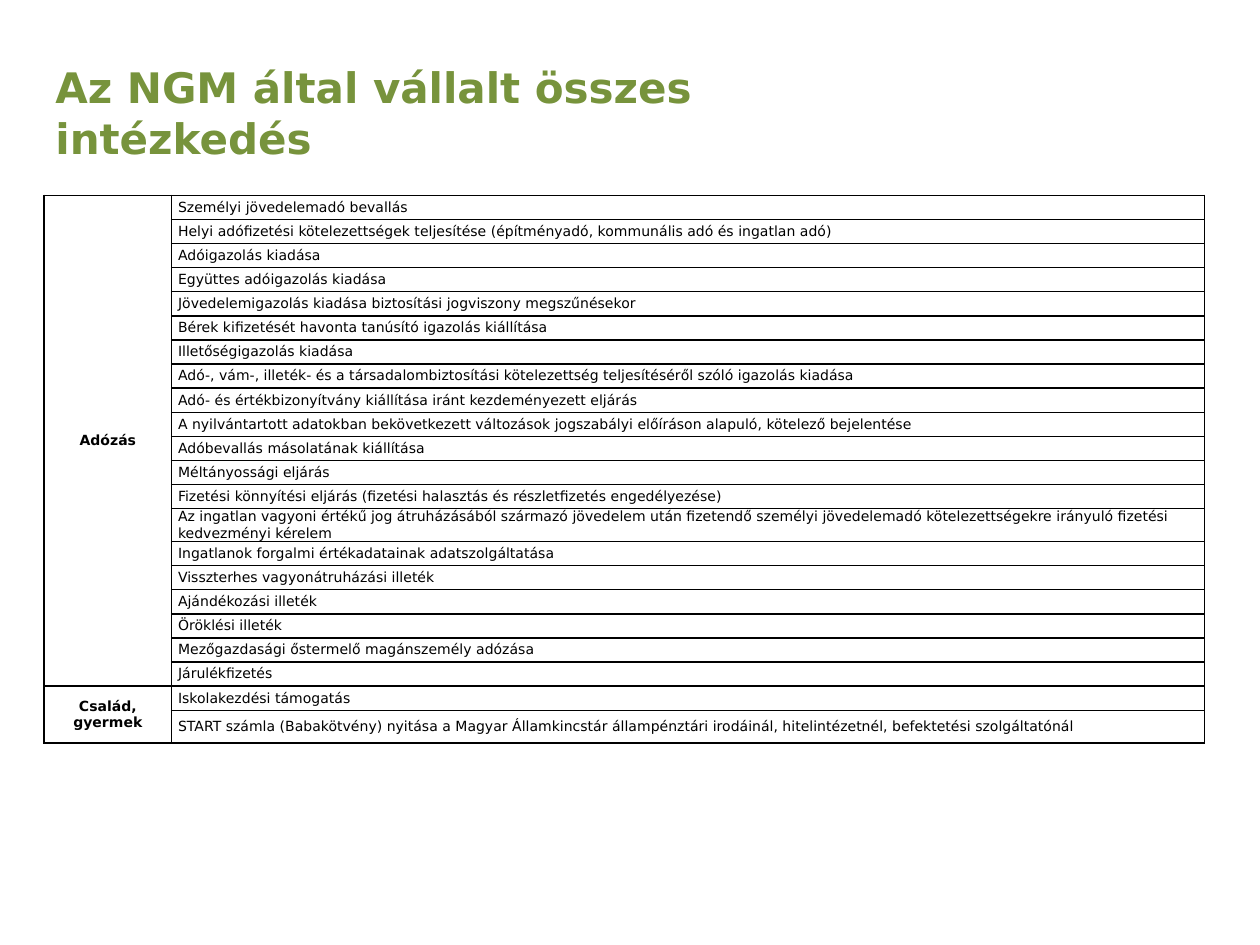
import dataclasses

import lxml.etree
import pptx
import pptx.dml.color
import pptx.enum.text
import pptx.oxml.ns
import pptx.util

WIDE, HIGH = 10, 7.5
FACE = "DejaVu Sans"
GREEN, BLACK = "77933C", "000000"
COLS = (0.11, 0.89)  # shares of the table width
LEFT, TOP, SPAN, DEPTH = 0.35, 1.55, 9.21, 4.35
TALL = 0.26  # height of the taller rows


@dataclasses.dataclass
class Group:
    name: str
    items: list[str]
    tall: int  # index of the taller row


GROUPS = [
    Group("Adózás", [
        "Személyi jövedelemadó bevallás",
        "Helyi adófizetési kötelezettségek teljesítése (építményadó, kommunális adó és ingatlan adó)",
        "Adóigazolás kiadása",
        "Együttes adóigazolás kiadása",
        "Jövedelemigazolás kiadása biztosítási jogviszony megszűnésekor",
        "Bérek kifizetését havonta tanúsító igazolás kiállítása",
        "Illetőségigazolás kiadása",
        "Adó-, vám-, illeték- és a társadalombiztosítási kötelezettség teljesítéséről szóló igazolás kiadása",
        "Adó- és értékbizonyítvány kiállítása iránt kezdeményezett eljárás",
        "A nyilvántartott adatokban bekövetkezett változások jogszabályi előíráson alapuló, kötelező bejelentése",
        "Adóbevallás másolatának kiállítása",
        "Méltányossági eljárás",
        "Fizetési könnyítési eljárás (fizetési halasztás és részletfizetés engedélyezése)",
        "Az ingatlan vagyoni értékű jog átruházásából származó jövedelem után fizetendő személyi "
        "jövedelemadó kötelezettségekre irányuló fizetési kedvezményi kérelem",
        "Ingatlanok forgalmi értékadatainak adatszolgáltatása",
        "Visszterhes vagyonátruházási illeték",
        "Ajándékozási illeték",
        "Öröklési illeték",
        "Mezőgazdasági őstermelő magánszemély adózása",
        "Járulékfizetés",
    ], 13),
    Group("Család, gyermek", [
        "Iskolakezdési támogatás",
        "START számla (Babakötvény) nyitása a Magyar Államkincstár állampénztári irodáinál, "
        "hitelintézetnél, befektetési szolgáltatónál",
    ], 1),
]


def inch(size: float) -> int:
    return pptx.util.Inches(size)


def tint(color: str) -> pptx.dml.color.RGBColor:
    return pptx.dml.color.RGBColor.from_string(color)


def write(para, text: str, size: float, color: str, bold: bool, center: bool = False) -> None:
    align = pptx.enum.text.PP_ALIGN
    para.alignment = align.CENTER if center else align.LEFT
    run = para.add_run()
    run.text = text
    run.font.name = FACE
    run.font.size = pptx.util.Pt(size)
    run.font.bold = bold
    run.font.color.rgb = tint(color)


def frame(cell) -> None:
    """Clear the fill, tighten the margins and draw all four borders."""
    cell.margin_left = cell.margin_right = inch(0.05)
    cell.margin_top = cell.margin_bottom = 0
    cell.vertical_anchor = pptx.enum.text.MSO_ANCHOR.MIDDLE
    props = cell._tc.get_or_add_tcPr()
    name = pptx.oxml.ns.qn
    for side in ("a:lnL", "a:lnR", "a:lnT", "a:lnB"):
        line = lxml.etree.SubElement(props, name(side), w=str(pptx.util.Pt(1)))
        fill = lxml.etree.SubElement(line, name("a:solidFill"))
        lxml.etree.SubElement(fill, name("a:srgbClr"), val=BLACK)
    cell.fill.background()


def head(slide, text: str) -> None:
    title = slide.shapes.title
    title.left, title.top = inch(-0.04), inch(0.44)
    title.width, title.height = inch(6.22), inch(0.79)
    box = title.text_frame
    box.word_wrap = True
    box.auto_size = pptx.enum.text.MSO_AUTO_SIZE.NONE
    box.vertical_anchor = pptx.enum.text.MSO_ANCHOR.TOP
    para = box.paragraphs[0]
    write(para, text, 24, GREEN, True)
    props = para._p.get_or_add_pPr()
    props.set("marL", str(inch(0.38)))
    props.set("indent", "0")


def grid(slide, groups: list[Group]) -> None:
    count = sum(len(group.items) for group in groups)
    short = (DEPTH - TALL * len(groups)) / (count - len(groups))
    table = slide.shapes.add_table(
        count, len(COLS), inch(LEFT), inch(TOP), inch(SPAN), inch(DEPTH)).table
    table.first_row = table.horz_banding = False
    for col, share in zip(table.columns, COLS):
        col.width = inch(SPAN * share)
    for cell in table.iter_cells():
        frame(cell)

    start = 0
    for group in groups:
        # Merged group name
        first = table.cell(start, 0)
        first.merge(table.cell(start + len(group.items) - 1, 0))
        write(first.text_frame.paragraphs[0], group.name, 8, BLACK, True, True)
        # One measure per row
        for index, item in enumerate(group.items):
            row = start + index
            table.rows[row].height = inch(TALL if index == group.tall else short)
            write(table.cell(row, 1).text_frame.paragraphs[0], item, 8, BLACK, False)
        start += len(group.items)


def main() -> None:
    deck = pptx.Presentation()
    deck.slide_width, deck.slide_height = inch(WIDE), inch(HIGH)
    slide = deck.slides.add_slide(deck.slide_layouts[5])
    head(slide, "Az NGM által vállalt összes intézkedés")
    grid(slide, GROUPS)
    deck.save("out.pptx")


if __name__ == "__main__":
    main()
